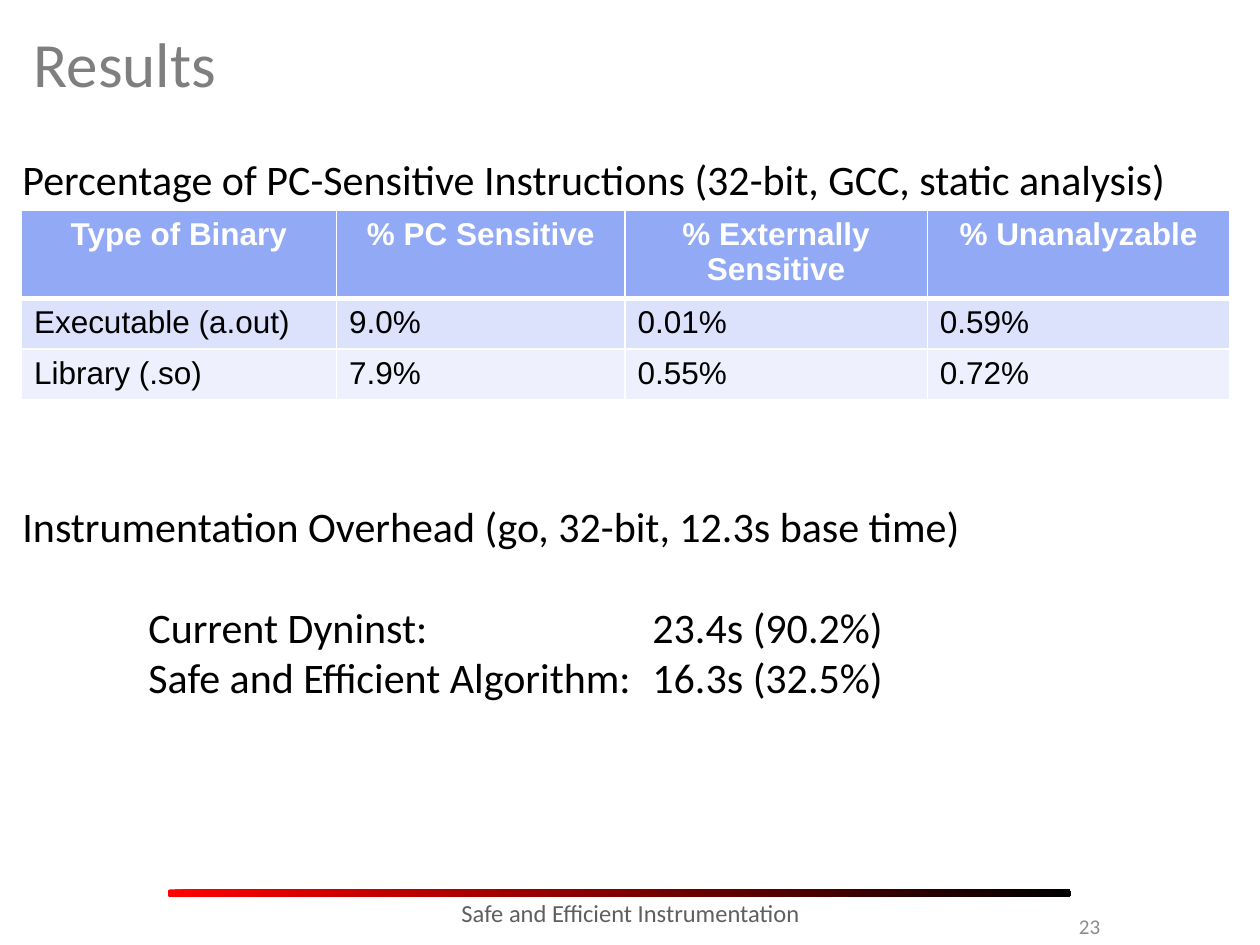
import pptx
import pptx.util
import pptx.dml.color
import pptx.enum.dml
import pptx.enum.shapes
import pptx.enum.text
import pptx.oxml
import pptx.oxml.ns
from lxml import etree

Inches = pptx.util.Inches
Pt = pptx.util.Pt
RGB = pptx.dml.color.RGBColor.from_string
PP_ALIGN = pptx.enum.text.PP_ALIGN
ANCHOR = pptx.enum.text.MSO_ANCHOR
qn = pptx.oxml.ns.qn

THEME = {
    "font": "Calibri", "table_font": "Arial",
    "title": 36, "body": 24, "table": 18, "footer": 14, "number": 12,
    "grey": "7F7F7F", "number_grey": "8C8C8C", "footer_grey": "5F5F5F",
    "black": "000000", "white": "FFFFFF", "red": "FF0000",
    "rows": ["92AAF6", "DCE2FB", "EEF1FD"],
}


def add_text(box, lines, size, color, align=PP_ALIGN.LEFT, anchor=ANCHOR.TOP):
    tf = slide.shapes.add_textbox(*[Inches(v) for v in box]).text_frame
    tf.word_wrap = True
    tf.vertical_anchor = anchor
    for i, line in enumerate(lines):
        p = tf.paragraphs[0] if i == 0 else tf.add_paragraph()
        p.text = line
        p.alignment = align
        if "\t" in line:
            tabs = etree.SubElement(p._p.get_or_add_pPr(), qn("a:tabLst"))
            for stop in (1, 5):
                etree.SubElement(tabs, qn("a:tab"), pos=str(Inches(stop)), algn="l")
        p.font.name = THEME["font"]
        p.font.size = Pt(THEME[size])
        p.font.color.rgb = RGB(THEME[color])
    return tf


def add_borders(cell, bottom):
    tcPr = cell._tc.get_or_add_tcPr()
    for i, (side, width) in enumerate((("L", 1), ("R", 1), ("T", 1), ("B", bottom))):
        ln = etree.Element(qn(f"a:ln{side}"), w=str(Pt(width)))
        fill = etree.SubElement(ln, qn("a:solidFill"))
        etree.SubElement(fill, qn("a:srgbClr"), val=THEME["white"])
        tcPr.insert(i, ln)


prs = pptx.Presentation()
prs.slide_width = Inches(10)
prs.slide_height = Inches(7.5)
slide = prs.slides.add_slide(prs.slide_layouts[6])

bar = slide.shapes.add_shape(
    pptx.enum.shapes.MSO_SHAPE.ROUNDED_RECTANGLE,
    Inches(1.33), Inches(7.06), Inches(7.17), Inches(0.06))
bar.adjustments[0] = 0.33
bar.shadow.inherit = False
bar.line.fill.background()
bar.fill.gradient()
bar.fill.gradient_angle = 0
for stop, color, position in zip(bar.fill.gradient_stops, ("red", "black"), (0, 1)):
    stop.color.rgb = RGB(THEME[color])
    stop.position = position

add_text((0.17, 0.08, 9.67, 0.83), ["Results"], "title", "grey", anchor=ANCHOR.MIDDLE)

rows = [
    ["Type of Binary", "% PC Sensitive", "% Externally Sensitive", "% Unanalyzable"],
    ["Executable (a.out)", "9.0%", "0.01%", "0.59%"],
    ["Library (.so)", "7.9%", "0.55%", "0.72%"],
]
table = slide.shapes.add_table(
    3, 4, Inches(0.17), Inches(1.67), Inches(9.58), Inches(1.47)).table
for column, width in zip(table.columns, (2.5, 2.29, 2.4, 2.4)):
    column.width = Inches(width)
for row, height in zip(table.rows, (0.66, 0.4, 0.4)):
    row.height = Inches(height)
for r, values in enumerate(rows):
    header = r == 0
    for c, value in enumerate(values):
        cell = table.cell(r, c)
        cell.fill.solid()
        cell.fill.fore_color.rgb = RGB(THEME["rows"][r])
        add_borders(cell, 3 if header else 1)
        p = cell.text_frame.paragraphs[0]
        p.text = value
        p.alignment = PP_ALIGN.CENTER if header else PP_ALIGN.LEFT
        p.font.name = THEME["table_font"]
        p.font.size = Pt(THEME["table"])
        p.font.bold = header
        p.font.color.rgb = RGB(THEME["white" if header else "black"])

add_text((7.5, 7.15, 1.33, 0.4), ["23"], "number", "number_grey",
         PP_ALIGN.RIGHT, ANCHOR.MIDDLE)
add_text((2.42, 7.08, 5.17, 0.4), ["Safe and Efficient Instrumentation"],
         "footer", "footer_grey", PP_ALIGN.CENTER)
add_text((0.08, 1.17, 10, 0.5),
         ["Percentage of PC-Sensitive Instructions (32-bit, GCC, static analysis)"],
         "body", "black")
overhead = add_text((0.08, 3.92, 10, 1.72), [
    "Instrumentation Overhead (go, 32-bit, 12.3s base time)",
    "\tCurrent Dyninst:\t23.4s (90.2%)",
    "\tSafe and Efficient Algorithm:\t16.3s (32.5%)",
], "body", "black")
overhead.paragraphs[1].space_before = Pt(29)

prs.save("out.pptx")
